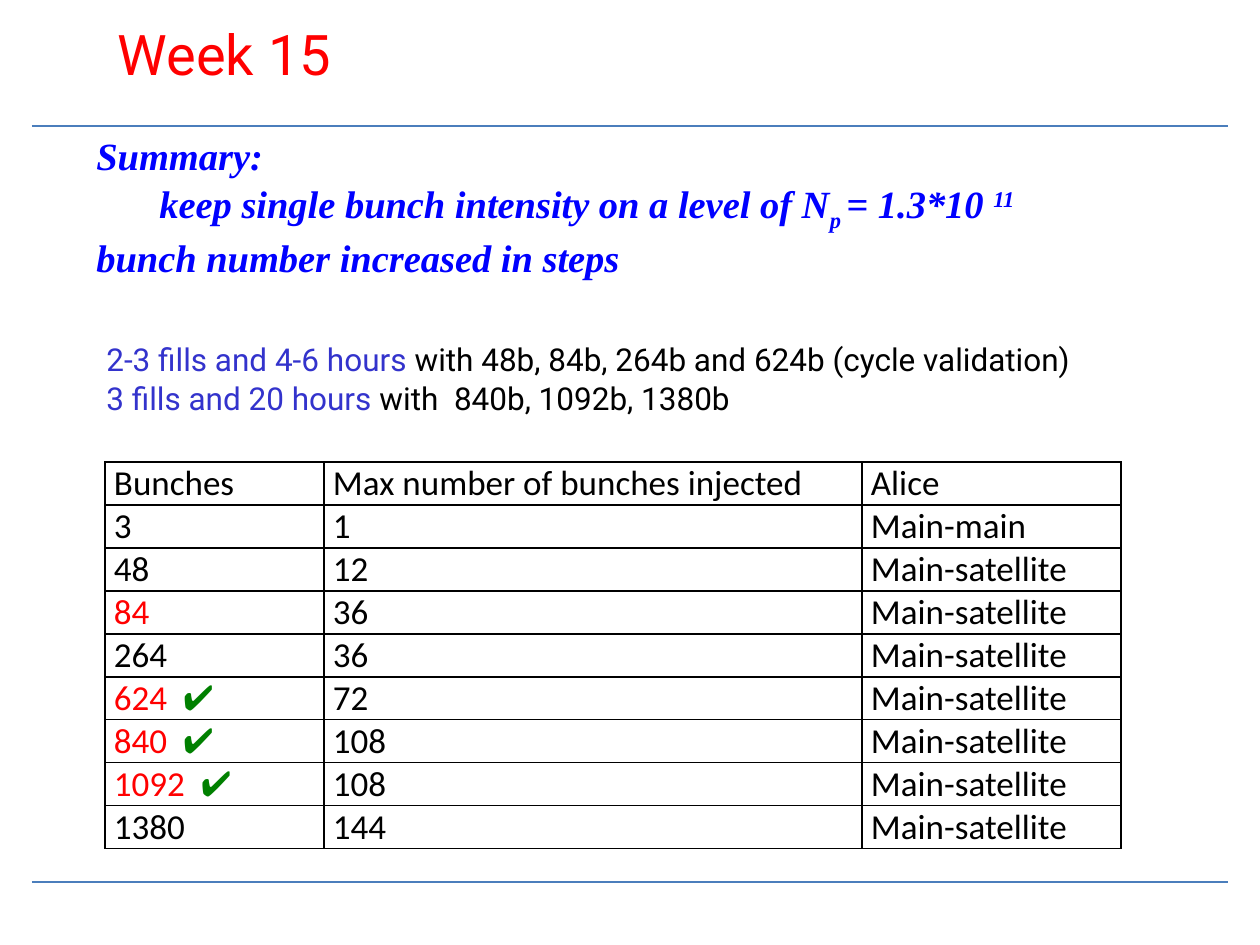
from dataclasses import dataclass

from lxml import etree
from pptx import Presentation
from pptx import util as u
from pptx.dml.color import RGBColor
from pptx.enum import shapes, text
from pptx.oxml import ns

SCALE = 914400 / 126
TITLE_ONLY = 5


def px(length):
    return u.Emu(round(length * SCALE))


@dataclass(frozen=True)
class Theme:
    rule: str = "4B7EBC"
    red: str = "FF0000"
    blue: str = "0000FF"
    indigo: str = "3333CC"
    green: str = "008000"
    black: str = "000000"
    title_size: int = 32
    summary_size: int = 22
    body_size: int = 18
    table_size: int = 20


THEME = Theme()
TITLE = dict(name="Roboto", size=THEME.title_size, color=THEME.red)
SUMMARY = dict(name="Times New Roman", size=THEME.summary_size,
               color=THEME.blue, bold=True, italic=True)
BODY = dict(name="Roboto", size=THEME.body_size, color=THEME.black)
HOURS = BODY | dict(color=THEME.indigo)
CELL = dict(name="Calibri", size=THEME.table_size, color=THEME.black)
CHANGED = CELL | dict(color=THEME.red)
TICK = CELL | dict(name="Arial", color=THEME.green)


class Page:
    def __init__(self, deck, theme):
        self.theme = theme
        self.slide = deck.slides.add_slide(deck.slide_layouts[TITLE_ONLY])

    def fill_text(self, frame, paras, gap=0, **layout):
        """Fill a frame with paragraphs, each a list of (words, format) spans."""
        frame.word_wrap = True
        for name, value in layout.items():
            setattr(frame, name, value)
        for index, spans in enumerate(paras):
            para = frame.add_paragraph() if index else frame.paragraphs[0]
            para.alignment = text.PP_ALIGN.LEFT
            if index:
                para.space_before = u.Pt(gap)
            for words, style in spans:
                self.span(para, words, **style)

    def span(self, para, words, size, color, baseline=0, **font):
        span = para.add_run()
        span.text = words
        span.font.size = u.Pt(size)
        span.font.color.rgb = RGBColor.from_string(color)
        for name, value in font.items():
            setattr(span.font, name, value)
        if baseline:
            span.font._element.set("baseline", str(baseline * 1000))

    def title(self, place, words):
        box = self.slide.shapes.title
        box.left, box.top, box.width, box.height = map(px, place)
        self.fill_text(box.text_frame, [[(words, TITLE)]], margin_top=0,
                       auto_size=text.MSO_AUTO_SIZE.NONE,
                       vertical_anchor=text.MSO_ANCHOR.TOP)

    def text_box(self, place, paras, gap, **layout):
        box = self.slide.shapes.add_textbox(*map(px, place))
        self.fill_text(box.text_frame, paras, gap, **layout)

    def rule(self, left, right, top):
        line = self.slide.shapes.add_connector(
            shapes.MSO_CONNECTOR.STRAIGHT, px(left), px(top), px(right), px(top))
        line.line.color.rgb = RGBColor.from_string(self.theme.rule)
        line.line.width = u.Pt(1.5)
        etree.SubElement(line._element.spPr, ns.qn("a:effectLst"))

    def table(self, left, top, widths, row_height, rows):
        frame = self.slide.shapes.add_table(
            len(rows), len(widths), px(left), px(top),
            px(sum(widths)), px(row_height * len(rows)))
        table = frame.table
        table.first_row = table.horz_banding = False
        for column, width in zip(table.columns, widths):
            column.width = px(width)
        for row, contents in zip(table.rows, rows):
            row.height = px(row_height)
            for cell, spans in zip(row.cells, contents):
                self.border(cell)
                cell.fill.background()
                cell.margin_left = cell.margin_right = px(9)
                cell.margin_top = cell.margin_bottom = 0
                self.fill_text(cell.text_frame, [spans])

    def border(self, cell):
        properties = cell._tc.get_or_add_tcPr()
        for side in ("lnL", "lnR", "lnT", "lnB"):
            line = etree.SubElement(properties, ns.qn(f"a:{side}"), w=str(u.Pt(1)))
            fill = etree.SubElement(line, ns.qn("a:solidFill"))
            etree.SubElement(fill, ns.qn("a:srgbClr"), val=self.theme.black)


def bunch_rows():
    """Table rows as spans; red marks a changed count, a tick a finished one."""
    steps = [("3", "1", ""), ("48", "12", ""), ("84", "36", "red"),
             ("264", "36", ""), ("624", "72", "tick"), ("840", "108", "tick"),
             ("1092", "108", "tick"), ("1380", "144", "")]
    heads = ("Bunches", "Max number of bunches injected", "Alice")
    rows = [[[(head, CELL)] for head in heads]]
    for bunches, injected, state in steps:
        count = [(bunches, CHANGED if state else CELL)]
        if state == "tick":
            count = [(bunches + "  ", CHANGED), ("✔", TICK)]
        collision = "Main-main" if bunches == "3" else "Main-satellite"
        rows.append([count, [(injected, CELL)], [(collision, CELL)]])
    return rows


def main():
    deck = Presentation()
    deck.slide_width, deck.slide_height = px(1260), px(945)
    page = Page(deck, THEME)
    for top in (126, 882):
        page.rule(32, 1228, top)
    page.title((105, 20, 1008, 121), "Week 15")
    page.text_box((84, 126, 1166, 195), [
        [("Summary:", SUMMARY)],
        [("\tkeep single bunch intensity on a level of N", SUMMARY),
         ("p ", SUMMARY | dict(baseline=-25)),
         ("= 1.3*10 ", SUMMARY),
         ("11", SUMMARY | dict(baseline=30))],
        [("bunch number increased in steps", SUMMARY)],
    ], gap=1)
    page.text_box((94, 294, 1018, 543), [
        [("2-3 fills and 4-6 hours ", HOURS),
         ("with 48b, 84b, 264b and 624b (cycle validation)", BODY)],
        [("3 fills and 20 hours ", HOURS),
         ("with  840b, 1092b, 1380b", BODY)],
    ], gap=0.5, margin_top=px(46))
    page.table(105, 462, (219, 538, 259), 43, bunch_rows())
    deck.save("out.pptx")


if __name__ == "__main__":
    main()
